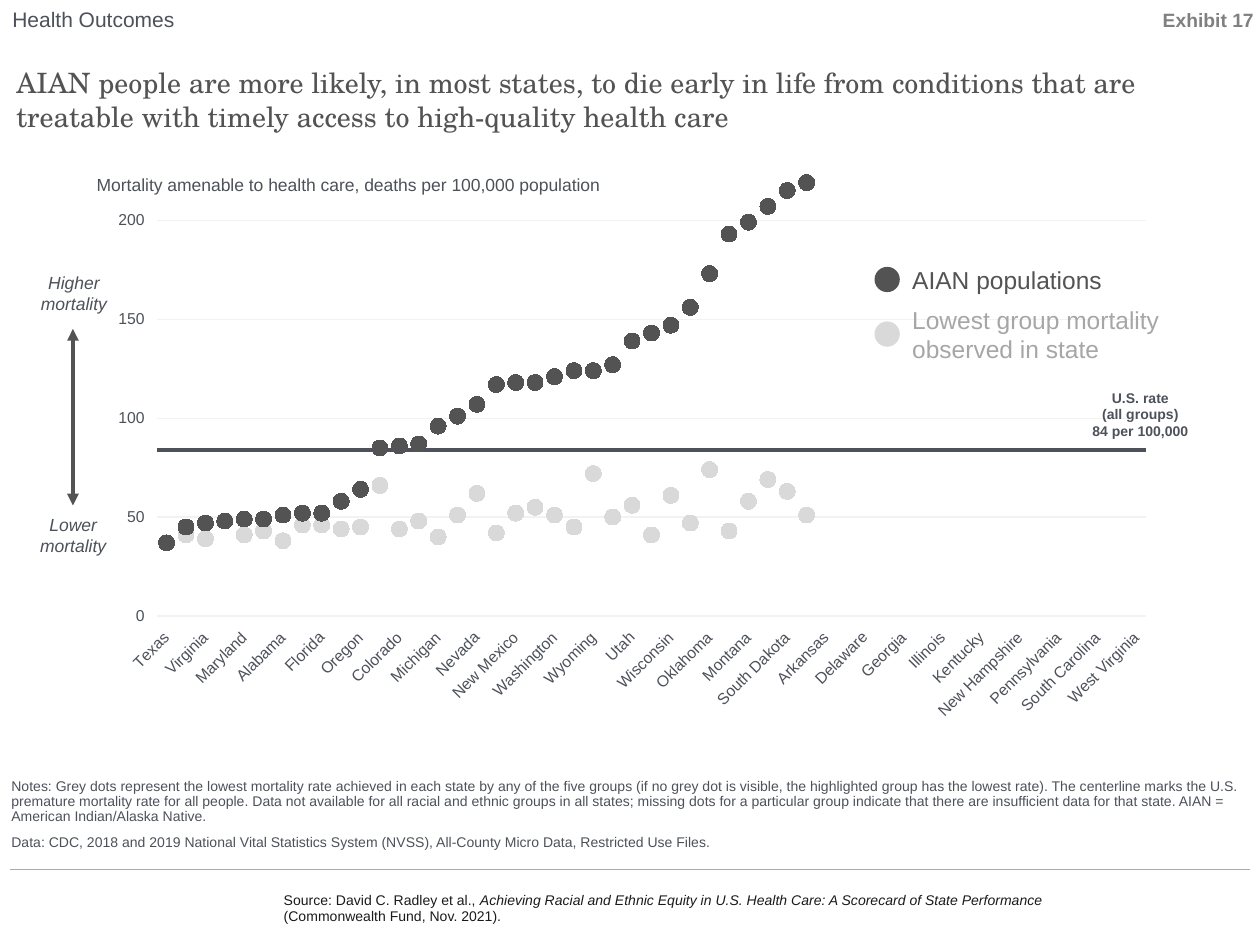
from dataclasses import dataclass

from lxml.etree import SubElement
from pptx import Presentation
from pptx.chart.data import CategoryChartData
from pptx.dml.color import RGBColor
from pptx.enum.chart import XL_CHART_TYPE, XL_MARKER_STYLE, XL_TICK_LABEL_POSITION, XL_TICK_MARK
from pptx.enum.shapes import MSO_CONNECTOR, MSO_SHAPE
from pptx.enum.text import MSO_ANCHOR, MSO_AUTO_SIZE, PP_ALIGN
from pptx.oxml import parse_xml
from pptx.oxml.ns import nsdecls, qn
from pptx.util import Cm, Pt


@dataclass(frozen=True)
class Theme:
    sans: str = "Arial"
    serif: str = "TeX Gyre Schola"
    dark: str = "535353"
    light: str = "D9D9D9"
    light_text: str = "A6A6A6"
    slate: str = "4C515A"
    ink: str = "1A1A1A"
    exhibit: str = "808080"
    rule: str = "ABABAB"
    grid: str = "F2F2F2"
    small: int = 8
    axis: int = 9
    label: int = 10
    tag: int = 11
    section: int = 12
    legend: int = 14
    title: int = 16
    marker: int = 9


THEME = Theme()

# Content: states in order of the AIAN rate, with rates where there are data
STATES = [
    "Texas", "Ohio", "Virginia", "Louisiana", "Maryland", "New York", "Alabama", "Tennessee",
    "Florida", "Missouri", "Oregon", "Maine", "Colorado", "Idaho", "Michigan", "California",
    "Nevada", "North Carolina", "New Mexico", "Arizona", "Washington", "Alaska", "Wyoming",
    "Kansas", "Utah", "Minnesota", "Wisconsin", "Iowa", "Oklahoma", "Nebraska", "Montana",
    "North Dakota", "South Dakota", "Mississippi", "Arkansas", "Connecticut", "Delaware",
    "District of Columbia", "Georgia", "Hawaii", "Illinois", "Indiana", "Kentucky",
    "Massachusetts", "New Hampshire", "New Jersey", "Pennsylvania", "Rhode Island",
    "South Carolina", "Vermont", "West Virginia",
]
LOWEST = [37, 41, 39, 48, 41, 43, 38, 46, 46, 44, 45, 66, 44, 48, 40, 51, 62, 42, 52, 55, 51, 45,
          72, 50, 56, 41, 61, 47, 74, 43, 58, 69, 63, 51]
AIAN = [37, 45, 47, 48, 49, 49, 51, 52, 52, 58, 64, 85, 86, 87, 96, 101, 107, 117, 118, 118, 121,
        124, 124, 127, 139, 143, 147, 156, 173, 193, 199, 207, 215, 219]
SERIES = [("Series 1", LOWEST, THEME.light), ("Series 2", AIAN, THEME.dark)]
US_RATE = 84

SECTION = ["Health Outcomes"]
EXHIBIT = ["Exhibit 17"]
TITLE = ["AIAN people are more likely, in most states, to die early in life from conditions that "
         "are treatable with timely access to high-quality health care"]
MEASURE = ["Mortality amenable to health care, deaths per 100,000 population"]
US_LABEL = ["U.S. rate", "(all groups)", "84 per 100,000"]
NOTES = [
    "Notes: Grey dots represent the lowest mortality rate achieved in each state by any of the "
    "five groups (if no grey dot is visible, the highlighted group has the lowest rate). The "
    "centerline marks the U.S. premature mortality rate for all people. Data not available for "
    "all racial and ethnic groups in all states; missing dots for a particular group indicate "
    "that there are insufficient data for that state. AIAN = American Indian/Alaska Native.",
    "Data: CDC, 2018 and 2019 National Vital Statistics System (NVSS), All-County Micro Data, "
    "Restricted Use Files.",
]
# A paragraph may be a list of (text, italic) runs
SOURCE = [
    [("Source: David C. Radley et al., ", False),
     ("Achieving Racial and Ethnic Equity in U.S. Health Care: A Scorecard of State Performance",
      True)],
    "(Commonwealth Fund, Nov. 2021).",
]
# Legend: text, dot colour, text colour, dot top, text box (cm)
LEGEND = [
    ("AIAN populations", THEME.dark, THEME.dark, 5.38, (18.14, 5.21, 6.38, 0.86)),
    ("Lowest group mortality observed in state", THEME.light, THEME.light_text, 6.48,
     (18.14, 6.02, 6.96, 1.45)),
]
DOT_LEFT, DOT_SIZE = 17.63, 0.51
# Ends of the mortality scale (cm)
SCALE = [("Lower mortality", (0.13, 10.24, 2.69, 1.12)),
         ("Higher mortality", (0.03, 5.36, 2.92, 1.12))]


def rgb(colour):
    return RGBColor.from_string(colour)


def style(font, size, colour, face=THEME.sans):
    font.name, font.size, font.color.rgb = face, Pt(size), rgb(colour)


def add_text(shapes, box, paragraphs, size, colour, face=THEME.sans, bold=False, italic=False,
             align=None, anchor=MSO_ANCHOR.TOP, inset=True, grow=True, spaced=False):
    frame = shapes.add_textbox(*map(Cm, box)).text_frame
    frame.word_wrap = True
    frame.vertical_anchor = anchor
    frame.auto_size = MSO_AUTO_SIZE.SHAPE_TO_FIT_TEXT if grow else MSO_AUTO_SIZE.NONE
    if not inset:
        frame.margin_left = frame.margin_right = frame.margin_top = frame.margin_bottom = 0
    for index, content in enumerate(paragraphs):
        paragraph = frame.add_paragraph() if index else frame.paragraphs[0]
        paragraph.alignment = align
        if spaced:
            paragraph.line_spacing, paragraph.space_after = 0.9, Pt(6)
        for text, slanted in [(content, italic)] if isinstance(content, str) else content:
            run = paragraph.add_run()
            run.text = text
            style(run.font, size, colour, face)
            run.font.bold, run.font.italic = bold, slanted


def add_line(shapes, start, end, colour, width, arrows=False):
    line = shapes.add_connector(MSO_CONNECTOR.STRAIGHT, *map(Cm, start + end))
    line.line.color.rgb, line.line.width = rgb(colour), Pt(width)
    if arrows:
        for tag in ("a:headEnd", "a:tailEnd"):
            SubElement(line.line._get_or_add_ln(), qn(tag), type="triangle")
    SubElement(line._element.spPr, qn("a:effectLst"))


def add_mortality_chart(shapes, box):
    data = CategoryChartData()
    data.categories = STATES
    for name, rates, _ in SERIES:
        data.add_series(name, rates + [None] * (len(STATES) - len(rates)))
    chart = shapes.add_chart(XL_CHART_TYPE.LINE_MARKERS, *map(Cm, box), data).chart
    chart.has_legend = chart.has_title = False
    style(chart.font, THEME.label, THEME.ink)

    # Dots only
    chart.plots[0].vary_by_categories = False
    for series, (_, _, colour) in zip(chart.plots[0].series, SERIES):
        series.smooth = False
        series.format.line.fill.background()
        series.marker.style, series.marker.size = XL_MARKER_STYLE.CIRCLE, THEME.marker
        series.marker.format.fill.solid()
        series.marker.format.fill.fore_color.rgb = rgb(colour)
        series.marker.format.line.fill.background()

    # The state axis doubles as the U.S. rate line
    rates, states = chart.value_axis, chart.category_axis
    rates.minimum_scale, rates.maximum_scale, rates.major_unit = 0, 225, 50
    rates.crosses_at = US_RATE
    rates.major_tick_mark = XL_TICK_MARK.OUTSIDE
    rates.tick_labels.number_format, rates.tick_labels.number_format_is_linked = "0", False
    rates.format.line.fill.background()
    rates.major_gridlines.format.line.color.rgb = rgb(THEME.grid)
    rates.major_gridlines.format.line.width = Pt(0.75)
    states.tick_label_position = XL_TICK_LABEL_POSITION.LOW
    states.major_tick_mark = XL_TICK_MARK.NONE
    states.format.line.color.rgb, states.format.line.width = rgb(THEME.slate), Pt(2)
    for axis in (rates, states):
        style(axis.tick_labels.font, THEME.axis, THEME.slate)

    # Slanted labels for every second state, fixed plot area
    axis_xml = states._element
    axis_xml.xpath("./c:txPr/a:bodyPr")[0].set("rot", "-2700000")
    for last in axis_xml.xpath("./c:noMultiLvlLbl"):
        last.addprevious(parse_xml(f'<c:tickLblSkip {nsdecls("c")} val="2"/>'))
    plot_area = chart._chartSpace.xpath("./c:chart/c:plotArea")[0]
    for layout in plot_area.xpath("./c:layout"):
        plot_area.remove(layout)
    sizes = "".join(f'<c:{key} val="{value}"/>' for key, value in [
        ("layoutTarget", "inner"), ("xMode", "edge"), ("yMode", "edge"),
        ("x", 0.052), ("y", 0.031), ("w", 0.959), ("h", 0.707)])
    plot_area.insert(0, parse_xml(
        f'<c:layout {nsdecls("c")}><c:manualLayout>{sizes}</c:manualLayout></c:layout>'))


def main():
    deck = Presentation()
    deck.slide_width, deck.slide_height = Cm(25.4), Cm(19.05)
    shapes = deck.slides.add_slide(deck.slide_layouts[6]).shapes
    middle, centre = MSO_ANCHOR.MIDDLE, PP_ALIGN.CENTER

    # Footer
    add_line(shapes, (25.2, 17.53), (0.2, 17.53), THEME.rule, 0.75)
    add_text(shapes, (5.72, 17.96, 17.78, 0.69), SOURCE, THEME.small, THEME.ink,
             anchor=middle, inset=False)

    # Title and chart
    add_text(shapes, (0.33, 0.86, 23.37, 2.29), TITLE, THEME.title, THEME.dark, THEME.serif,
             anchor=middle, inset=False, grow=False)
    add_mortality_chart(shapes, (2.31, 3.05, 20.83, 12.7))

    # Notes and header
    add_text(shapes, (0.23, 15.77, 24.99, 1.37), NOTES, THEME.small, THEME.slate,
             anchor=MSO_ANCHOR.BOTTOM, inset=False, grow=False, spaced=True)
    add_text(shapes, (23.32, 0, 2.08, 0.84), EXHIBIT, THEME.tag, THEME.exhibit, bold=True,
             align=centre, anchor=middle, inset=False, grow=False, spaced=True)
    add_text(shapes, (0, 0, 9.02, 0.76), SECTION, THEME.section, THEME.slate, anchor=middle)

    # Legend
    for text, dot_colour, text_colour, top, box in LEGEND:
        dot = shapes.add_shape(MSO_SHAPE.OVAL, *map(Cm, (DOT_LEFT, top, DOT_SIZE, DOT_SIZE)))
        dot.shadow.inherit = False
        dot.fill.solid()
        dot.fill.fore_color.rgb = rgb(dot_colour)
        dot.line.fill.background()
        add_text(shapes, box, [text], THEME.legend, text_colour)

    # Mortality scale
    scale = shapes.add_group_shape().shapes
    add_line(scale, (1.47, 6.63), (1.47, 10.19), THEME.dark, 2.25, arrows=True)
    for text, box in SCALE:
        add_text(scale, box, [text], THEME.label, THEME.slate, italic=True, align=centre)

    # Chart labels
    add_text(shapes, (1.7, 3.38, 18.47, 0.69), MEASURE, THEME.label, THEME.slate)
    add_text(shapes, (21.34, 7.72, 3.3, 1.27), US_LABEL, THEME.small, THEME.slate, bold=True,
             align=centre)

    deck.save("out.pptx")


if __name__ == "__main__":
    main()
